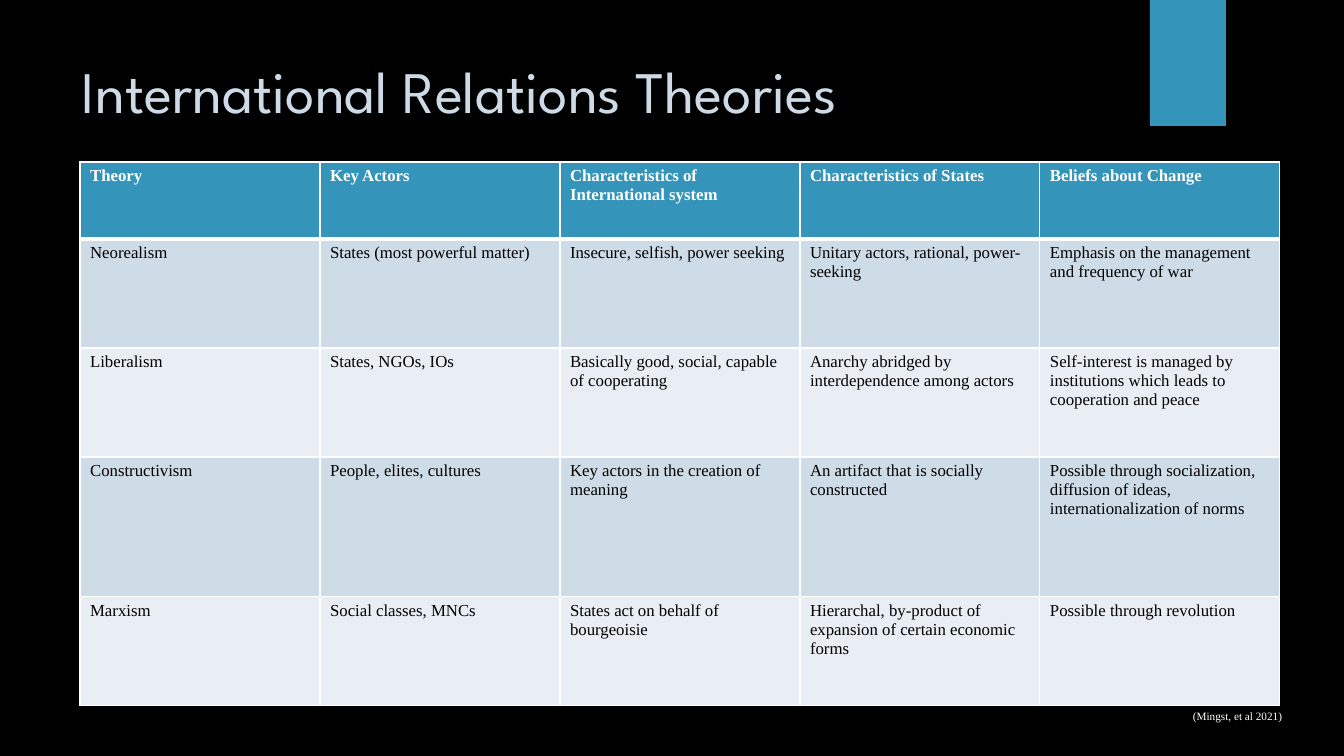
"""Build a slide with a table that compares international relations theories."""
from lxml import etree
from pptx import Presentation
from pptx.dml.color import RGBColor
from pptx.enum.shapes import MSO_SHAPE
from pptx.enum.text import MSO_ANCHOR
from pptx.oxml.ns import qn
from pptx.util import Pt

TITLE = "International Relations Theories"
SOURCE = "(Mingst, et al 2021)"
ROWS = [
    ("Theory", "Key Actors", "Characteristics of International system",
     "Characteristics of States", "Beliefs about Change"),
    ("Neorealism", "States (most powerful matter)",
     "Insecure, selfish, power seeking",
     "Unitary actors, rational, power-seeking",
     "Emphasis on the management and frequency of war"),
    ("Liberalism", "States, NGOs, IOs",
     "Basically good, social, capable of cooperating",
     "Anarchy abridged by interdependence among actors",
     "Self-interest is managed by institutions which leads to "
     "cooperation and peace"),
    ("Constructivism", "People, elites, cultures",
     "Key actors in the creation of meaning",
     "An artifact that is socially constructed",
     "Possible through socialization, diffusion of ideas, "
     "internationalization of norms"),
    ("Marxism", "Social classes, MNCs",
     "States act on behalf of bourgeoisie",
     "Hierarchal, by-product of expansion of certain economic forms",
     "Possible through revolution"),
]
HEIGHTS = [77, 109, 109, 140, 109]
COLUMN = 240

BLACK = RGBColor(0x00, 0x00, 0x00)
WHITE = RGBColor(0xFF, 0xFF, 0xFF)
BLUE = RGBColor(0x34, 0x94, 0xBA)
PALE = RGBColor(0xCE, 0xDB, 0xE6)
BANDS = [RGBColor(0xE8, 0xEE, 0xF3), RGBColor(0xCE, 0xDC, 0xE7)]
HEAD, BODY = "League Spartan", "Times New Roman"
RECT, TOP = MSO_SHAPE.RECTANGLE, MSO_ANCHOR.TOP
SCALE = 914400 / 100.8


def px(*sizes):
    """Turn pixel lengths into EMU."""
    return [round(size * SCALE) for size in sizes]


def write(frame, text, face, size, color, bold=False):
    """Put one styled run into the first paragraph."""
    run = frame.paragraphs[0].add_run()
    run.text = text
    font = run.font
    font.name, font.size, font.bold = face, Pt(size), bold
    font.color.rgb = color


def label(slide, box, text, face, size, color, wrap):
    """Add a text box anchored at its top."""
    frame = slide.shapes.add_textbox(*px(*box)).text_frame
    frame.word_wrap, frame.vertical_anchor = wrap, TOP
    write(frame, text, face, size, color)


def edge(cell, side, width):
    """Draw one white border of a cell."""
    props = cell._tc.get_or_add_tcPr()
    line = etree.SubElement(props, qn("a:" + side), w=str(Pt(width)))
    fill = etree.SubElement(line, qn("a:solidFill"))
    etree.SubElement(fill, qn("a:srgbClr"), val=str(WHITE))


def grid(slide):
    """Add the table of theories."""
    count = len(ROWS[0])
    box = px(80, 162, COLUMN * count, sum(HEIGHTS))
    table = slide.shapes.add_table(len(ROWS), count, *box).table
    for column in table.columns:
        column.width = px(COLUMN)[0]
    for r, (texts, height) in enumerate(zip(ROWS, HEIGHTS)):
        table.rows[r].height = px(height)[0]
        top = r == 0
        for c, text in enumerate(texts):
            cell = table.cell(r, c)
            for side in ("lnL", "lnR", "lnT", "lnB"):
                thick = (top and side == "lnB") or (r == 1 and side == "lnT")
                edge(cell, side, 3 if thick else 1)
            cell.fill.solid()
            cell.fill.fore_color.rgb = BLUE if top else BANDS[r % 2]
            write(cell.text_frame, text, BODY, 12, WHITE if top else BLACK, top)


def main():
    """Build and save the deck."""
    deck = Presentation()
    deck.slide_width, deck.slide_height = px(1344, 756)
    slide = deck.slides.add_slide(deck.slide_layouts[6])
    slide.background.fill.solid()
    slide.background.fill.fore_color.rgb = BLACK
    tab = slide.shapes.add_shape(RECT, *px(1150, 0, 76, 126))
    tab.shadow.inherit = False
    tab.fill.solid()
    tab.fill.fore_color.rgb = BLUE
    tab.line.fill.background()
    label(slide, (72, 50, 1037, 100), TITLE, HEAD, 42, PALE, True)
    grid(slide)
    label(slide, (1183, 704, 110, 24), SOURCE, BODY, 8, WHITE, False)
    deck.save("out.pptx")


if __name__ == "__main__":
    main()
